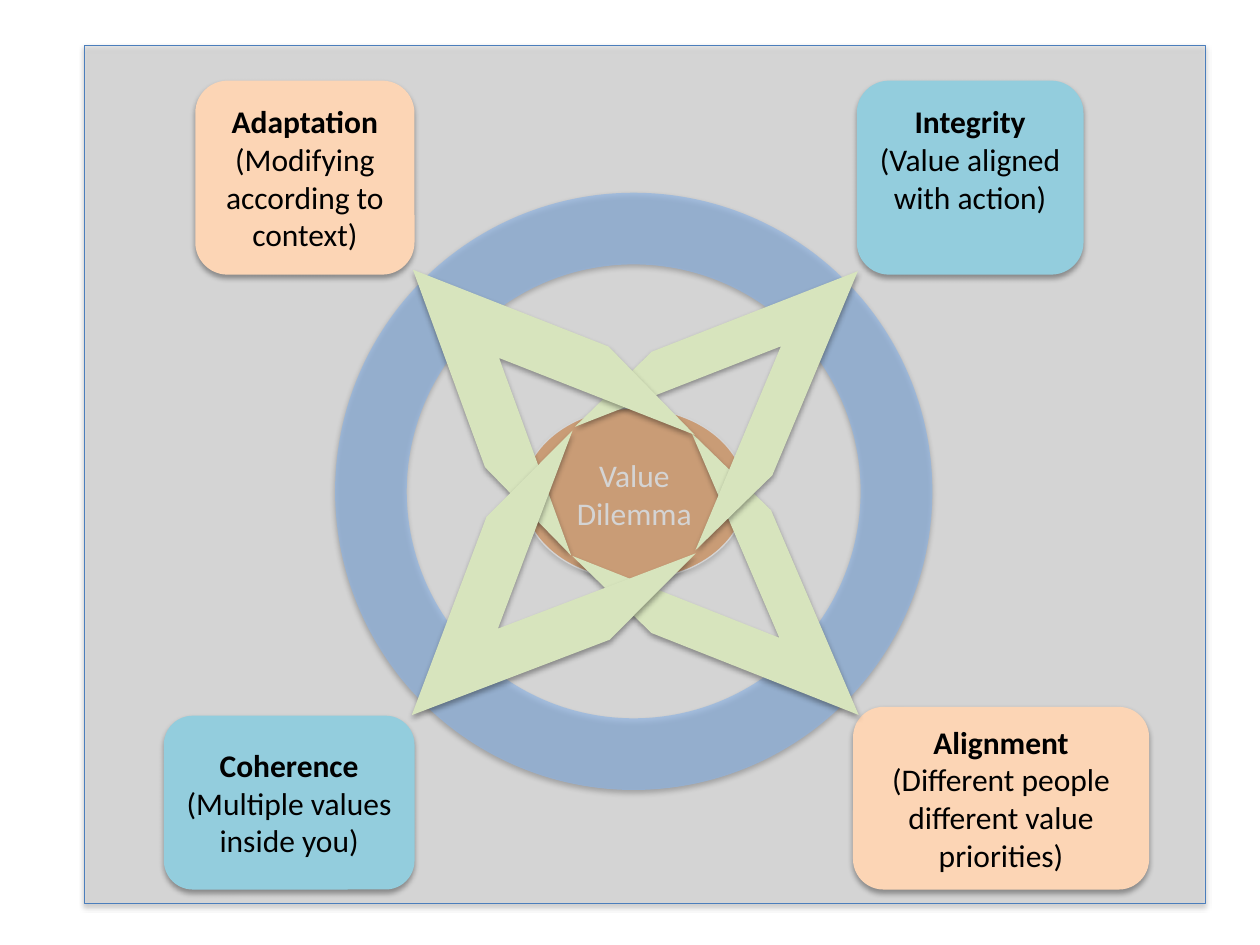
from lxml import etree
from pptx import Presentation
from pptx.dml.color import RGBColor
from pptx.enum.shapes import MSO_SHAPE
from pptx.enum.text import MSO_ANCHOR, PP_ALIGN
from pptx.oxml.ns import qn
from pptx.util import Inches, Pt

COLORS = {
    "white": "FFFFFF", "black": "000000", "panel": "D9D9D9", "border": "4B7EBC",
    "core": "E46C0A", "ring": "8EB4E3", "blue": "93CDDD", "peach": "FCD5B5",
    "arrow": "D7E4BD",
}
CORE = (4.15, 3.24, 1.77, 1.36)
PANEL = (0.67, 0.36, 8.9, 6.81)
RING = (2.66, 1.53, 4.74, 4.74)
# heading, explanation, colour, box, bottom inset
VALUES = [
    ("Integrity", "(Value aligned with action)", "blue", (6.8, 0.64, 1.8, 1.54), 0.35),
    ("Coherence", "(Multiple values inside you)", "blue", (1.3, 5.68, 1.99, 1.38), 0.05),
    ("Alignment", "(Different people different value priorities)", "peach",
     (6.77, 5.61, 2.35, 1.45), 0.05),
    ("Adaptation", "(Modifying according to context)", "peach",
     (1.55, 0.64, 1.74, 1.54), 0.05),
]
# box, rotation, depth of the point
ARROWS = [
    ((4.66, 4.12, 2.51, 1.36), 44.2, 1.2),
    ((4.69, 2.33, 2.47, 1.37), 315.7, 1.18),
    ((2.9, 2.35, 2.5, 1.37), 225.7, 1.11),
    ((2.9, 4.1, 2.5, 1.38), 134.9, 1.11),
]


def rgb(name):
    return RGBColor.from_string(COLORS[name])


def add_shadow(shape):
    shape.shadow.inherit = False
    effects = shape._element.spPr.find(qn("a:effectLst"))
    shadow = etree.SubElement(effects, qn("a:outerShdw"), blurRad=str(Pt(3.1)),
                              dist=str(Pt(1.8)), dir="5400000", rotWithShape="0")
    color = etree.SubElement(shadow, qn("a:srgbClr"), val=COLORS["black"])
    etree.SubElement(color, qn("a:alpha"), val="35000")


def add_shape(slide, kind, box, fill, line=None, opacity=None):
    s = slide.shapes.add_shape(kind, *map(Inches, box))
    s.fill.solid()
    s.fill.fore_color.rgb = rgb(fill)
    if opacity:
        color = s._element.spPr.find(qn("a:solidFill"))[0]
        etree.SubElement(color, qn("a:alpha"), val=str(opacity * 1000))
    if line:
        s.line.color.rgb = rgb(line)
        s.line.width = Pt(0.75)
    else:
        s.line.fill.background()
    add_shadow(s)
    return s


def write(shape, lines, color):
    """Fill the shape with centred lines, given as (text, bold) pairs."""
    tf = shape.text_frame
    tf.word_wrap = True
    tf.vertical_anchor = MSO_ANCHOR.MIDDLE
    for i, (text, bold) in enumerate(lines):
        p = tf.add_paragraph() if i else tf.paragraphs[0]
        p.text = text
        p.alignment = PP_ALIGN.CENTER
        p.font.name = "Calibri"
        p.font.size = Pt(18)
        p.font.bold = bold
        p.font.color.rgb = rgb(color)


def main():
    prs = Presentation()
    prs.slide_width, prs.slide_height = Inches(10), Inches(7.5)
    slide = prs.slides.add_slide(prs.slide_layouts[6])

    core = add_shape(slide, MSO_SHAPE.OVAL, CORE, "core", line="white")
    write(core, [("Value Dilemma", False)], "white")
    # The translucent panel lies over the core and mutes it.
    add_shape(slide, MSO_SHAPE.RECTANGLE, PANEL, "panel", line="border", opacity=53)
    ring = add_shape(slide, MSO_SHAPE.DONUT, RING, "ring", opacity=67)
    ring.adjustments[0] = 0.12

    for heading, explanation, fill, box, inset in VALUES:
        s = add_shape(slide, MSO_SHAPE.ROUNDED_RECTANGLE, box, fill)
        write(s, [(heading, True), (explanation, False)], "black")
        s.text_frame.margin_bottom = Inches(inset)

    for box, rotation, depth in ARROWS:
        s = add_shape(slide, MSO_SHAPE.CHEVRON, box, "arrow")
        s.rotation = rotation
        s.adjustments[0] = depth

    prs.save("out.pptx")


if __name__ == "__main__":
    main()
